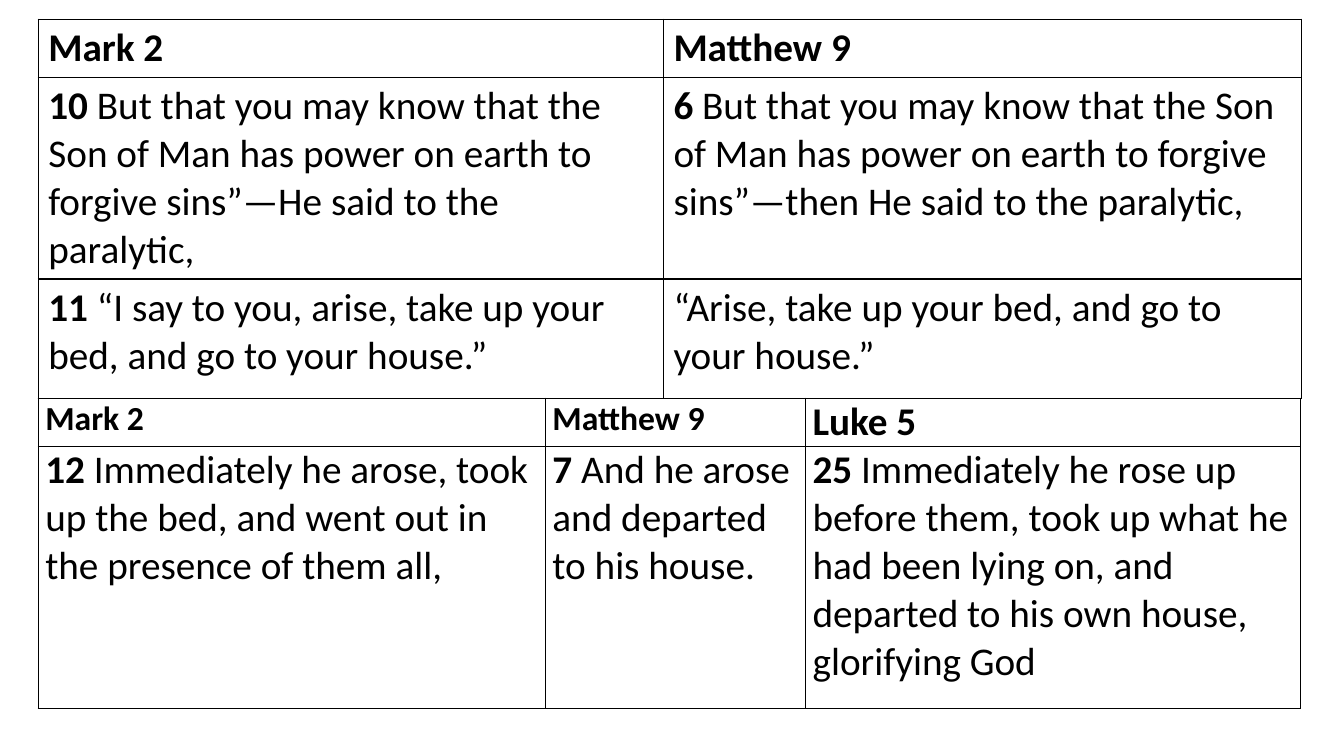
import pptx
import pptx.dml.color
import pptx.oxml
import pptx.oxml.ns
import pptx.util

PX = 9144  # EMU per px, 100 px to the inch
COLORS = {"ink": "000000", "paper": "FFFFFF"}
FONT = "Calibri"


def px(n):
    return pptx.util.Emu(n * PX)


def rgb(name):
    return pptx.dml.color.RGBColor.from_string(COLORS[name])


def add_run(p, text, size=28, bold=False, color="ink"):
    r = p.add_run()
    r.text = text
    r.font.name = FONT
    r.font.size = pptx.util.Pt(size)
    r.font.bold = bold
    r.font.color.rgb = rgb(color)


def add_borders(cell, width=1, color="ink"):
    tc_pr = cell._tc.get_or_add_tcPr()
    for i, side in enumerate(("lnL", "lnR", "lnT", "lnB")):
        # Border lines come before the fill in the cell properties
        tc_pr.insert(i, pptx.oxml.parse_xml(
            f'<a:{side} {pptx.oxml.ns.nsdecls("a")} w="{pptx.util.Pt(width)}">'
            f'<a:solidFill><a:srgbClr val="{COLORS[color]}"/></a:solidFill>'
            f'</a:{side}>'))


def add_verse_table(s, box, cols, rows, headings, verses, margins):
    """Headings are (text, size); verses are rows of (number, text)."""
    x, y, w, h = map(px, box)
    table = s.shapes.add_table(len(rows), len(cols), x, y, w, h).table
    table.first_row = table.horz_banding = False
    for column, width in zip(table.columns, cols):
        column.width = px(width)
    for row, height in zip(table.rows, rows):
        row.height = px(height)

    for cell in table.iter_cells():
        cell.fill.solid()
        cell.fill.fore_color.rgb = rgb("paper")
        cell.margin_left = cell.margin_right = px(margins[0])
        cell.margin_top = cell.margin_bottom = px(margins[1])
        add_borders(cell)

    # Heading row
    for c, (text, size) in enumerate(headings):
        add_run(table.cell(0, c).text_frame.paragraphs[0], text, size=size, bold=True)

    # Verse rows, each with a bold verse number
    for r, line in enumerate(verses, start=1):
        for c, (number, text) in enumerate(line):
            p = table.cell(r, c).text_frame.paragraphs[0]
            if number:
                add_run(p, number, bold=True)
            add_run(p, text)


def main():
    prs = pptx.Presentation()
    prs.slide_width, prs.slide_height = px(1333), px(750)
    s = prs.slides.add_slide(prs.slide_layouts[6])

    # Two gospels side by side
    add_verse_table(
        s, (38, 19, 1253, 375), cols=(620, 633), rows=(57, 199, 119),
        headings=[("Mark 2", 28), ("Matthew 9", 28)],
        verses=[
            [("10", " But that you may know that the Son of Man has power on earth "
                    "to forgive sins”—He said to the paralytic,"),
             ("6", " But that you may know that the Son of Man has power on earth "
                   "to forgive sins”—then He said to the paralytic,")],
            [("11", " “I say to you, arise, take up your bed, and go to your house.”"),
             ("", "“Arise, take up your bed, and go to your house.”")],
        ],
        margins=(10, 5))

    # Three gospels side by side
    add_verse_table(
        s, (38, 395, 1252, 307), cols=(503, 258, 491), rows=(47, 260),
        headings=[("Mark 2", 24), ("Matthew 9", 24), ("Luke 5", 28)],
        verses=[
            [("12", " Immediately he arose, took up the bed, and went out in "
                    "the presence of them all,"),
             ("7", " And he arose and departed to his house."),
             ("25", " Immediately he rose up before them, took up what he had been "
                    "lying on, and departed to his own house, glorifying God")],
        ],
        margins=(7, 0))

    prs.save("out.pptx")


if __name__ == "__main__":
    main()
